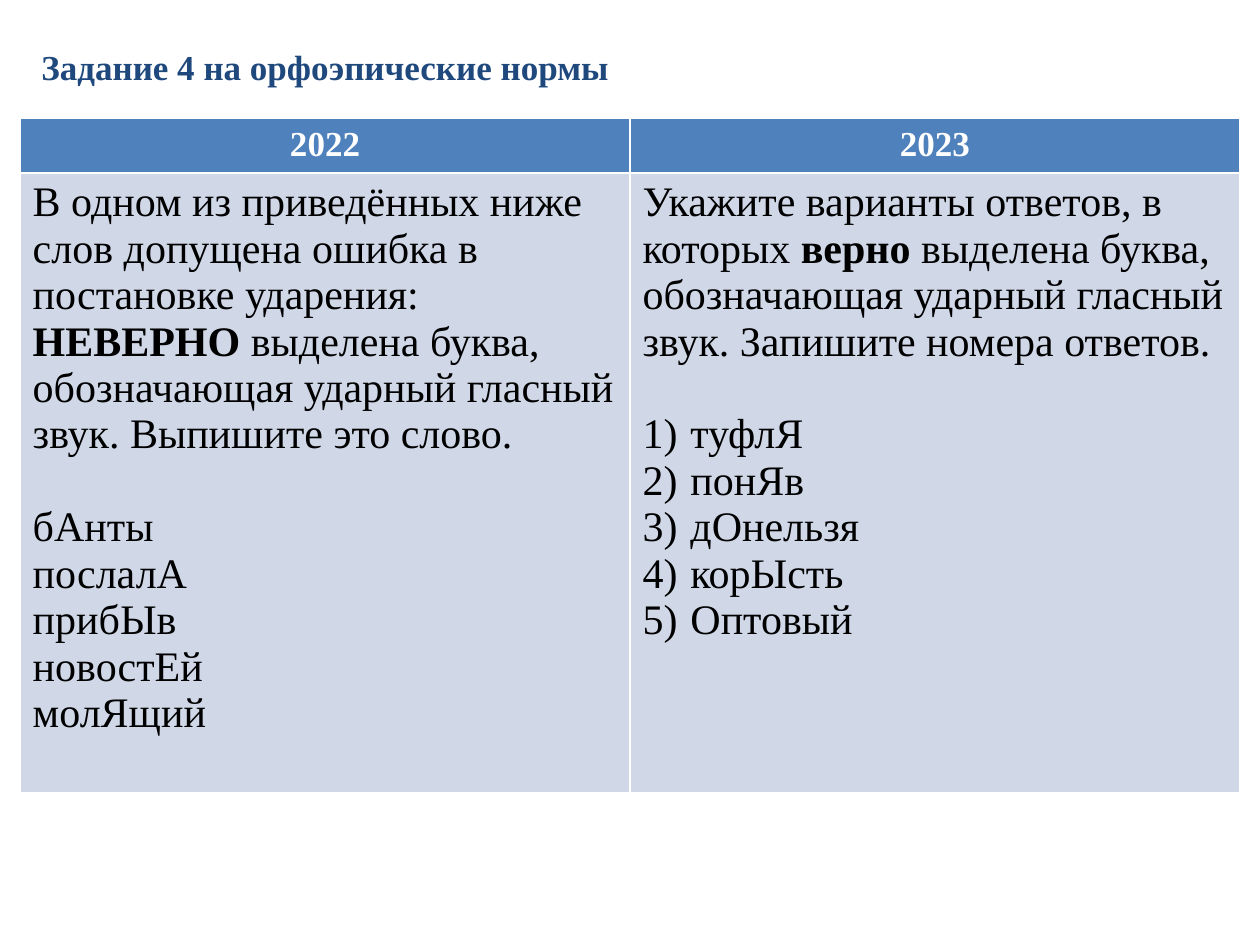
from lxml import etree
from pptx import Presentation
from pptx.dml.color import RGBColor
from pptx.enum.text import PP_ALIGN
from pptx.oxml.ns import qn
from pptx.util import Inches, Pt

CENTER = PP_ALIGN.CENTER
FONT = "Times New Roman"
HEADER_FILL = "4F81BD"
BODY_FILL = "D0D8E8"


def color(value):
    return RGBColor.from_string(value)


def format_runs(paragraph, size, text_color, bold_texts):
    for run in paragraph.runs:
        run.font.name = FONT
        run.font.size = Pt(size)
        run.font.bold = run.text in bold_texts
        run.font.color.rgb = color(text_color)


columns = [
    {
        "year": "2022",
        "task": [
            "В одном из приведённых ниже слов допущена ошибка в постановке ударения: ",
            "НЕВЕРНО",
            " выделена буква, обозначающая ударный гласный звук. Выпишите это слово.",
        ],
        "words": ["бАнты", "послалА", "прибЫв", "новостЕй", "молЯщий"],
        "numbered": False,
    },
    {
        "year": "2023",
        "task": [
            "Укажите варианты ответов, в которых ",
            "верно",
            " выделена буква, обозначающая ударный гласный звук. Запишите номера ответов.",
        ],
        "words": ["туфлЯ", "понЯв", "дОнельзя", "корЫсть", "Оптовый"],
        "numbered": True,
    },
]

presentation = Presentation()
presentation.slide_width = Inches(10)
presentation.slide_height = Inches(7.5)
slide = presentation.slides.add_slide(presentation.slide_layouts[6])

title = slide.shapes.add_textbox(Inches(0.23), Inches(0.31), Inches(9.3), Inches(0.44))
title.text_frame.word_wrap = True
title.text_frame.text = "Задание 4 на орфоэпические нормы"
format_runs(title.text_frame.paragraphs[0], 20, "1F497D", [title.text_frame.text])

table = slide.shapes.add_table(
    2, len(columns), Inches(0.16), Inches(0.94), Inches(9.68), Inches(5.33)
).table
table.rows[0].height = Inches(0.41)
table.rows[1].height = Inches(4.92)

for index, column in enumerate(columns):
    header = table.cell(0, index)
    header.fill.solid()
    header.fill.fore_color.rgb = color(HEADER_FILL)
    header.text_frame.text = column["year"]
    header.text_frame.paragraphs[0].alignment = CENTER
    format_runs(header.text_frame.paragraphs[0], 20, "FFFFFF", [column["year"]])

    body = table.cell(1, index)
    body.fill.solid()
    body.fill.fore_color.rgb = color(BODY_FILL)
    task = body.text_frame.paragraphs[0]
    for part in column["task"]:
        task.add_run().text = part
    format_runs(task, 24, "000000", [column["task"][1]])

    for position, word in enumerate(column["words"]):
        paragraph = body.text_frame.add_paragraph()
        paragraph.text = word
        format_runs(paragraph, 24, "000000", [])
        if position == 0:
            paragraph.space_before = Pt(26.5)
        if column["numbered"]:
            properties = paragraph._p.get_or_add_pPr()
            properties.set("marL", str(Inches(0.38)))
            properties.set("indent", str(Inches(-0.38)))
            etree.SubElement(properties, qn("a:buFont"), typeface=FONT)
            etree.SubElement(properties, qn("a:buAutoNum"), type="arabicParenR")

presentation.save("out.pptx")
